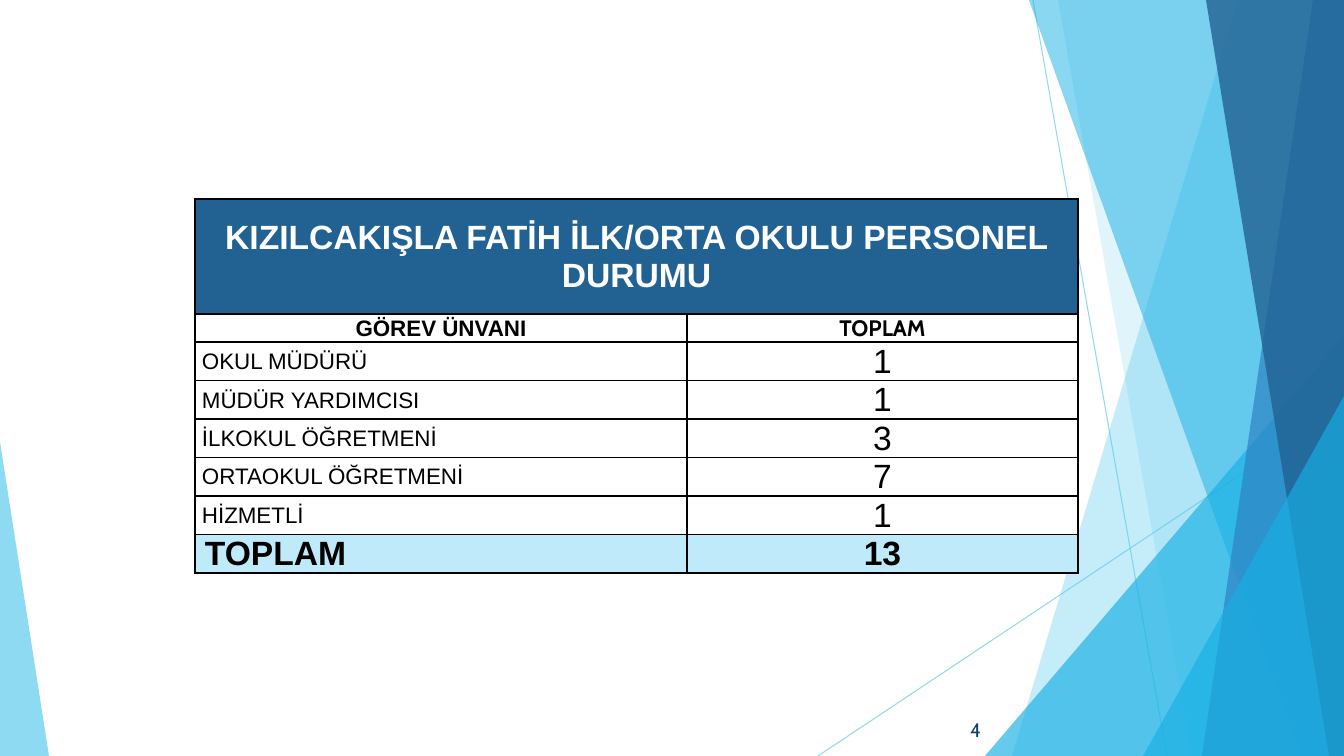
from dataclasses import dataclass

from pptx import Presentation
from pptx.dml.color import RGBColor
from pptx.enum.shapes import MSO_CONNECTOR, MSO_SHAPE
from pptx.enum.text import MSO_ANCHOR, PP_ALIGN
from pptx.oxml.ns import qn
from pptx.util import Pt
from lxml.etree import SubElement

EMU_PER_PX = 914400 / 100.8
WIDTH, HEIGHT = 1344, 756


@dataclass(frozen=True)
class Theme:
    """Hold the colours, fonts and type sizes of the slide."""
    sky: str = "5FCBEF"
    cyan: str = "17B0E4"
    blue: str = "2E83C3"
    navy: str = "226292"
    pale: str = "BFEAF9"
    white: str = "FFFFFF"
    black: str = "000000"
    ink: str = "174162"
    sans: str = "Arial"
    accent: str = "Cabin"
    large: int = 24
    medium: int = 16
    small: int = 14


THEME = Theme()
HEADING = {"size": Pt(THEME.large), "name": THEME.sans, "bold": True}
COLUMN = HEADING | {"size": Pt(THEME.medium)}
LABEL = COLUMN | {"bold": False}
NUMBER = HEADING | {"bold": False}
PAGE_NUMBER = {"size": Pt(THEME.small), "name": THEME.accent, "bold": False}

STAFF = [
    ("OKUL MÜDÜRÜ", 1),
    ("MÜDÜR YARDIMCISI", 1),
    ("İLKOKUL ÖĞRETMENİ", 3),
    ("ORTAOKUL ÖĞRETMENİ", 7),
    ("HİZMETLİ", 1),
]


def px(length):
    """Turn pixels into EMU."""
    return round(length * EMU_PER_PX)


def apply(target, values):
    """Set each named attribute on the target."""
    for name, value in values.items():
        setattr(target, name, value)


def fade(shape, percent):
    """Make the colour of a shape or connector partly transparent."""
    for colour in shape.element.spPr.iter(qn("a:srgbClr")):
        SubElement(colour, qn("a:alpha"), val=str(percent * 1000))


def paint(shape, colour, percent):
    """Give a shape a translucent fill and no outline."""
    shape.shadow.inherit = False
    shape.fill.solid()
    shape.fill.fore_color.rgb = RGBColor.from_string(colour)
    shape.line.fill.background()
    fade(shape, percent)


def add_ribbon(page, top, bottom, colour, percent):
    """Draw a full-height band from a slanted left edge to the slide's right edge."""
    outline = page.shapes.build_freeform(top, 0, scale=EMU_PER_PX)
    outline.add_line_segments([(WIDTH, 0), (WIDTH, HEIGHT), (bottom, HEIGHT)])
    paint(outline.convert_to_shape(), colour, percent)


def add_corner(page, left, top, width, apex, colour, percent):
    """Draw a right-angled triangle standing on the bottom edge."""
    shape = page.shapes.add_shape(
        MSO_SHAPE.ISOSCELES_TRIANGLE, px(left), px(top), px(width), px(HEIGHT - top))
    shape.adjustments[0] = apex
    paint(shape, colour, percent)


def add_hairline(page, start, end):
    """Draw a thin translucent line between two points."""
    line = page.shapes.add_connector(
        MSO_CONNECTOR.STRAIGHT, *(px(value) for value in start + end))
    line.line.width = Pt(0.75)
    line.line.color.rgb = RGBColor.from_string(THEME.sky)
    SubElement(line.element.spPr, qn("a:effectLst"))
    fade(line, 70)


def add_facets(page):
    """Draw the faceted decoration on both sides."""
    add_hairline(page, (1033, 0), (1167, HEIGHT))
    add_hairline(page, (WIDTH, 406), (818, HEIGHT))
    add_ribbon(page, 1238, 1012, THEME.sky, 36)
    add_ribbon(page, 1058, 1192, THEME.sky, 20)
    add_corner(page, 985, 336, 359, 1, THEME.cyan, 66)
    add_ribbon(page, 1029, 1301, THEME.cyan, 50)
    add_ribbon(page, 1313, 1202, THEME.blue, 70)
    add_ribbon(page, 1206, 1329, THEME.navy, 80)
    add_corner(page, 1143, 396, 201, 1, THEME.cyan, 66)
    add_corner(page, 0, 442, 49, 0, THEME.sky, 70)


def write(frame, text, align, font, colour):
    """Write one formatted paragraph into a text frame."""
    para = frame.paragraphs[0]
    para.alignment = align
    span = para.add_run()
    span.text = text
    apply(span.font, font)
    span.font.color.rgb = RGBColor.from_string(colour)


def add_borders(cell):
    """Rule all four sides of a cell in black."""
    properties = cell._tc.get_or_add_tcPr()
    for side in ("lnL", "lnR", "lnT", "lnB"):
        line = SubElement(properties, qn(f"a:{side}"), w=str(Pt(1)))
        fill = SubElement(line, qn("a:solidFill"))
        SubElement(fill, qn("a:srgbClr"), val=THEME.black)


def fill_cell(cell, text, font, fill=None, colour=THEME.black, indent=None):
    """Write a cell, centred unless it has a left indent."""
    apply(cell, {"margin_left": px(indent or 1), "margin_right": px(1),
                 "margin_top": px(1), "margin_bottom": 0,
                 "vertical_anchor": MSO_ANCHOR.MIDDLE})
    if fill:
        cell.fill.solid()
        cell.fill.fore_color.rgb = RGBColor.from_string(fill)
    else:
        cell.fill.background()
    align = PP_ALIGN.LEFT if indent else PP_ALIGN.CENTER
    write(cell.text_frame, text, align, font, colour)


def add_staff_table(page):
    """Add the staff table with its heading and total."""
    widths = [492, 391]
    heights = [115, 28] + [38] * (len(STAFF) + 1)
    table = page.shapes.add_table(
        len(heights), len(widths), px(195), px(199),
        px(sum(widths)), px(sum(heights))).table
    apply(table, {"first_row": False, "horz_banding": False})
    for column, width in zip(table.columns, widths):
        column.width = px(width)
    for row, height in zip(table.rows, heights):
        row.height = px(height)
    for cell in table.iter_cells():
        add_borders(cell)

    table.cell(0, 0).merge(table.cell(0, 1))
    fill_cell(table.cell(0, 0), "KIZILCAKIŞLA FATİH İLK/ORTA OKULU PERSONEL DURUMU",
              HEADING, THEME.navy, THEME.white)
    fill_cell(table.cell(1, 0), "GÖREV ÜNVANI", COLUMN, THEME.white)
    fill_cell(table.cell(1, 1), "TOPLAM", COLUMN | {"name": THEME.accent}, THEME.white)
    for row, (duty, count) in enumerate(STAFF, start=2):
        fill_cell(table.cell(row, 0), duty, LABEL, indent=7)
        fill_cell(table.cell(row, 1), str(count), NUMBER)
    last = len(heights) - 1
    total = sum(count for _, count in STAFF)
    fill_cell(table.cell(last, 0), "TOPLAM", HEADING, THEME.pale, indent=10)
    fill_cell(table.cell(last, 1), str(total), HEADING, THEME.pale)


def add_page_number(page, number):
    """Add the page number at the bottom."""
    frame = page.shapes.add_textbox(px(915), px(704), px(76), px(52)).text_frame
    apply(frame, {"word_wrap": True, "vertical_anchor": MSO_ANCHOR.MIDDLE})
    write(frame, str(number), PP_ALIGN.RIGHT, PAGE_NUMBER, THEME.ink)


def main():
    """Build and save the slide."""
    deck = Presentation()
    apply(deck, {"slide_width": px(WIDTH), "slide_height": px(HEIGHT)})
    page = deck.slides.add_slide(deck.slide_layouts[6])
    add_facets(page)
    add_staff_table(page)
    add_page_number(page, 4)
    deck.save("out.pptx")


if __name__ == "__main__":
    main()
